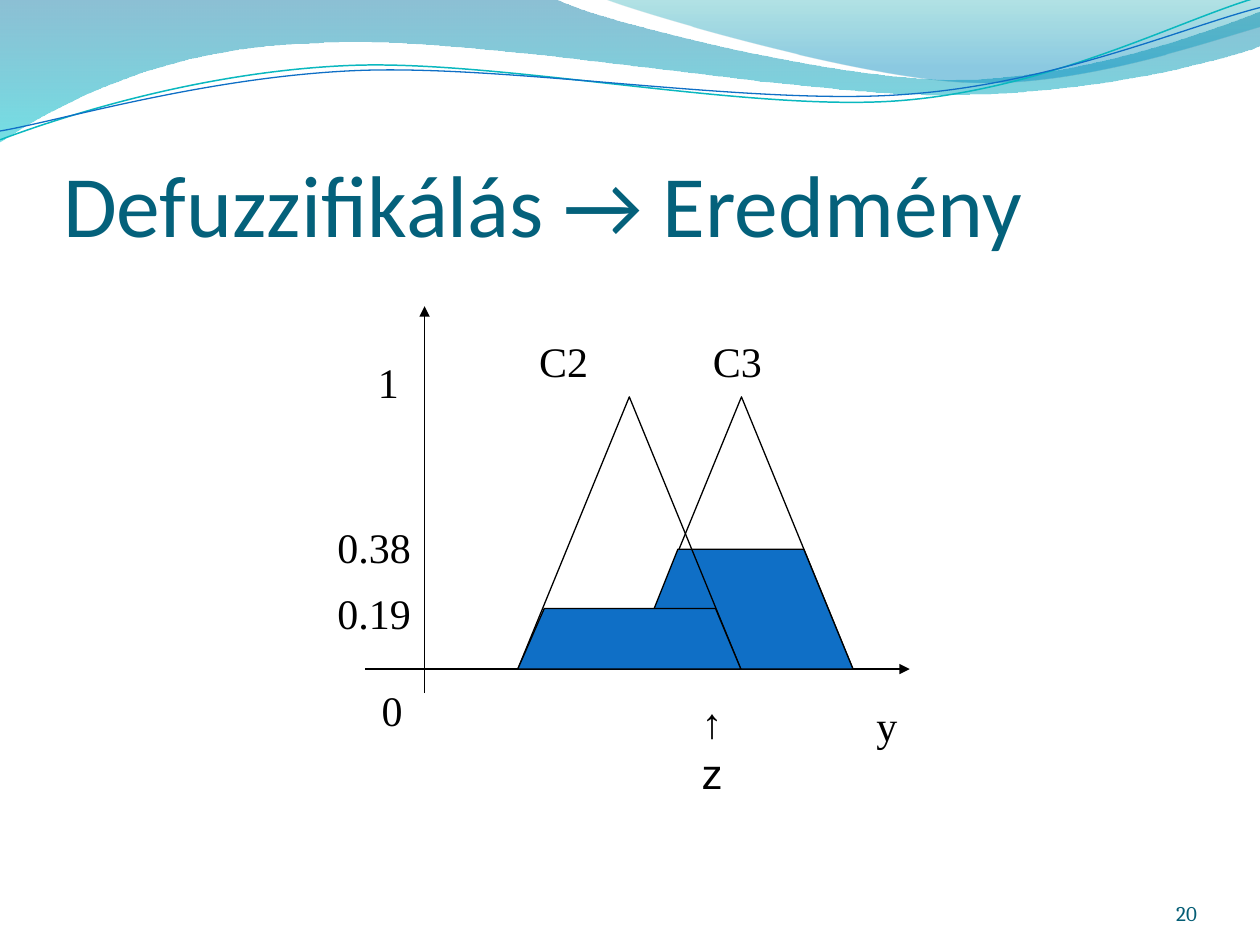
import math

import pptx
import pptx.util
import pptx.dml.color
import pptx.enum.shapes
import pptx.enum.text
import pptx.oxml
import pptx.oxml.ns
from lxml import etree

Inches, Pt = pptx.util.Inches, pptx.util.Pt
RGB = pptx.dml.color.RGBColor
ANCHOR, ALIGN = pptx.enum.text.MSO_ANCHOR, pptx.enum.text.PP_ALIGN
qn = pptx.oxml.ns.qn

BLACK = RGB(0x00, 0x00, 0x00)
BLUE = RGB(0x0F, 0x6F, 0xC6)
TEAL = RGB(0x0A, 0xB8, 0xBF)
TITLE_COLOR = RGB(0x04, 0x61, 0x7B)
NUMBER_COLOR = RGB(0x04, 0x5D, 0x75)
SERIF = "Times New Roman"

# Outlines: two numbers are a line to a point, six are a Bezier curve.
# Gradient stops: position, colour, opacity in percent.
WAVES = [
    ([(0, 0), (4.4, -0.01), (4.76, 0.17, 6.64, 0.63, 7.58, 0.63),
      (8.53, 0.63, 9.58, 0.26, 10, 0.09), (10.01, 0.36),
      (9.83, 0.44, 8.7, 0.76, 7.46, 0.75), (6.22, 0.75, 3.82, 0.28, 2.57, 0.34),
      (1.29, 0.36, 0.46, 0.83, -0.01, 1.13), (0, 0)],
     [(0, RGB(0x00, 0x74, 0xA1), 45), (1, RGB(0x00, 0xC6, 0xCF), 55)]),
    ([(4.79, -0.01), (5.09, 0.11, 6.82, 0.62, 7.69, 0.65),
      (8.56, 0.69, 9.61, 0.32, 10, 0.21), (10, 0), (4.79, -0.01)],
     [(0, RGB(0x00, 0xA1, 0xA9), 30), (0.8, RGB(0x00, 0x8B, 0xBF), 45)]),
]
WAVE_TILT = -2.7
WAVE_CENTER = (4.99, 0.58)
WAVE_LINES = [
    ([(0, 1.11), (0.48, 0.93, 1.58, 0.57, 2.77, 0.52),
      (3.95, 0.47, 5.93, 0.89, 7.13, 0.8), (8.33, 0.71, 9.38, 0.15, 9.98, -0.02)],
     TEAL, 0.85),
    ([(0, 1.04), (0.47, 0.96, 1.64, 0.61, 2.83, 0.56),
      (4.03, 0.51, 5.97, 0.84, 7.17, 0.75), (8.36, 0.67, 9.41, 0.21, 10, 0.06)],
     BLUE, 0.75),
]

BASE_Y, PEAK_Y, SET_WIDTH = 5.31, 3.15, 1.77
X_AXIS = ((2.9, BASE_Y), (7.22, BASE_Y))
Y_AXIS = ((3.37, 5.5), (3.37, 2.43))
# Left edge of the set, then the clipped top: left, right, height
C3_SET, C2_SET = (5, 5.38, 6.38, 4.36), (4.11, 4.32, 5.68, 4.83)
LABELS = [
    ("0", 2.93, 5.38, 0.37), ("1", 2.9, 2.78, 0.37),
    ("C3", 5.56, 2.61, 0.59), ("C2", 4.18, 2.61, 0.59),
    ("0.38", 2.58, 4.09, 0.79), ("0.19", 2.58, 4.61, 0.79),
]


def pairs(seg):
    return list(zip(seg[::2], seg[1::2]))


def level(outline):
    """Turn a tilted outline back to its position before rotation."""
    a = math.radians(-WAVE_TILT)
    cx, cy = WAVE_CENTER
    return [[v for x, y in pairs(seg) for v in (
        cx + (x - cx) * math.cos(a) - (y - cy) * math.sin(a),
        cy + (x - cx) * math.sin(a) + (y - cy) * math.cos(a))] for seg in outline]


def set_line(sp, color, width=0.75):
    sp.line.color.rgb = color
    sp.line.width = Pt(width)


def add_freeform(shapes, outline, close=True):
    """Build the outline through its end points, then bend the curved segments."""
    points = [(Inches(seg[-2]), Inches(seg[-1])) for seg in outline]
    builder = shapes.build_freeform(*points[0])
    builder.add_line_segments(points[1:], close=close)
    sp = builder.convert_to_shape()
    sp.shadow.inherit = False
    lines = list(sp._element.spPr.iter(qn("a:lnTo")))
    for line, seg in zip(lines, outline[1:]):
        if len(seg) == 6:
            curve = etree.Element(qn("a:cubicBezTo"))
            for x, y in pairs(seg):
                etree.SubElement(curve, qn("a:pt"), x=str(Inches(x) - sp.left),
                                 y=str(Inches(y) - sp.top))
            line.getparent().replace(line, curve)
    return sp


def fill_gradient(sp, stops):
    sp.line.fill.background()
    sp.fill.gradient()
    sp.fill.gradient_angle = 270
    for stop, (position, color, _) in zip(sp.fill.gradient_stops, stops):
        stop.position = position
        stop.color.rgb = color
    for clr, (_, _, opacity) in zip(sp._element.spPr.iter(qn("a:srgbClr")), stops):
        etree.SubElement(clr, qn("a:alpha"), val=str(opacity * 1000))


def add_axis(shapes, start, end):
    ends = [Inches(v) for v in start + end]
    cx = shapes.add_connector(pptx.enum.shapes.MSO_CONNECTOR.STRAIGHT, *ends)
    set_line(cx, BLACK)
    etree.SubElement(cx.line._get_or_add_ln(), qn("a:tailEnd"), type="triangle")
    etree.SubElement(cx._element.spPr, qn("a:effectLst"))


def add_text(shapes, lines, box, size=24, font=SERIF, color=BLACK, align=ALIGN.LEFT,
             anchor=ANCHOR.TOP, insets=(0.1, 0.05, 0.1, 0.05), wrap=True):
    tf = shapes.add_textbox(*[Inches(v) for v in box]).text_frame
    tf.word_wrap = wrap
    tf.vertical_anchor = anchor
    tf.margin_left, tf.margin_top, tf.margin_right, tf.margin_bottom = [
        Inches(v) for v in insets]
    tf.text = "\n".join(lines)
    for p in tf.paragraphs:
        p.alignment = align
        p.font.size, p.font.name, p.font.color.rgb = Pt(size), font, color


def add_fuzzy_set(shapes, left, top_left, top_right, top_y):
    """Draw the triangle of a set and the filled part below its clipped top."""
    sp = shapes.add_shape(
        pptx.enum.shapes.MSO_SHAPE.ISOSCELES_TRIANGLE, Inches(left), Inches(PEAK_Y),
        Inches(SET_WIDTH), Inches(BASE_Y - PEAK_Y))
    sp.shadow.inherit = False
    sp.fill.background()
    set_line(sp, BLACK)
    area = add_freeform(shapes, [(left, BASE_Y), (top_left, top_y), (top_right, top_y),
                                 (left + SET_WIDTH, BASE_Y)])
    area.fill.solid()
    area.fill.fore_color.rgb = BLUE
    set_line(area, BLACK)


def main():
    prs = pptx.Presentation()
    prs.slide_width, prs.slide_height = Inches(10), Inches(7.5)
    shapes = prs.slides.add_slide(prs.slide_layouts[6]).shapes

    for outline, stops in WAVES:
        fill_gradient(add_freeform(shapes, outline), stops)
    for outline, color, width in WAVE_LINES:
        sp = add_freeform(shapes, level(outline), close=False)
        sp.rotation = WAVE_TILT
        sp.fill.background()
        set_line(sp, color, width)

    add_text(shapes, ["20"], (8.67, 6.95, 0.83, 0.4), 12, "Cambria", NUMBER_COLOR,
             ALIGN.RIGHT, ANCHOR.BOTTOM, (0, 0, 0, 0))
    add_text(shapes, ["Defuzzifikálás → Eredmény"], (0.5, 0.77, 9.08, 1.25), 50,
             "Calibri", TITLE_COLOR, anchor=ANCHOR.BOTTOM, insets=(0, 0.05, 0, 0))

    add_axis(shapes, *X_AXIS)
    add_fuzzy_set(shapes, *C3_SET)
    add_axis(shapes, *Y_AXIS)
    add_fuzzy_set(shapes, *C2_SET)
    for text, left, top, width in LABELS:
        add_text(shapes, [text], (left, top, width, 0.5), wrap=False)
    add_text(shapes, ["y"], (3.37, 5.5, 3.85, 0.5), align=ALIGN.RIGHT)
    add_text(shapes, ["↑", "z"], (5.47, 5.48, 0.59, 0.91), font="Arial")

    prs.save("out.pptx")


if __name__ == "__main__":
    main()
